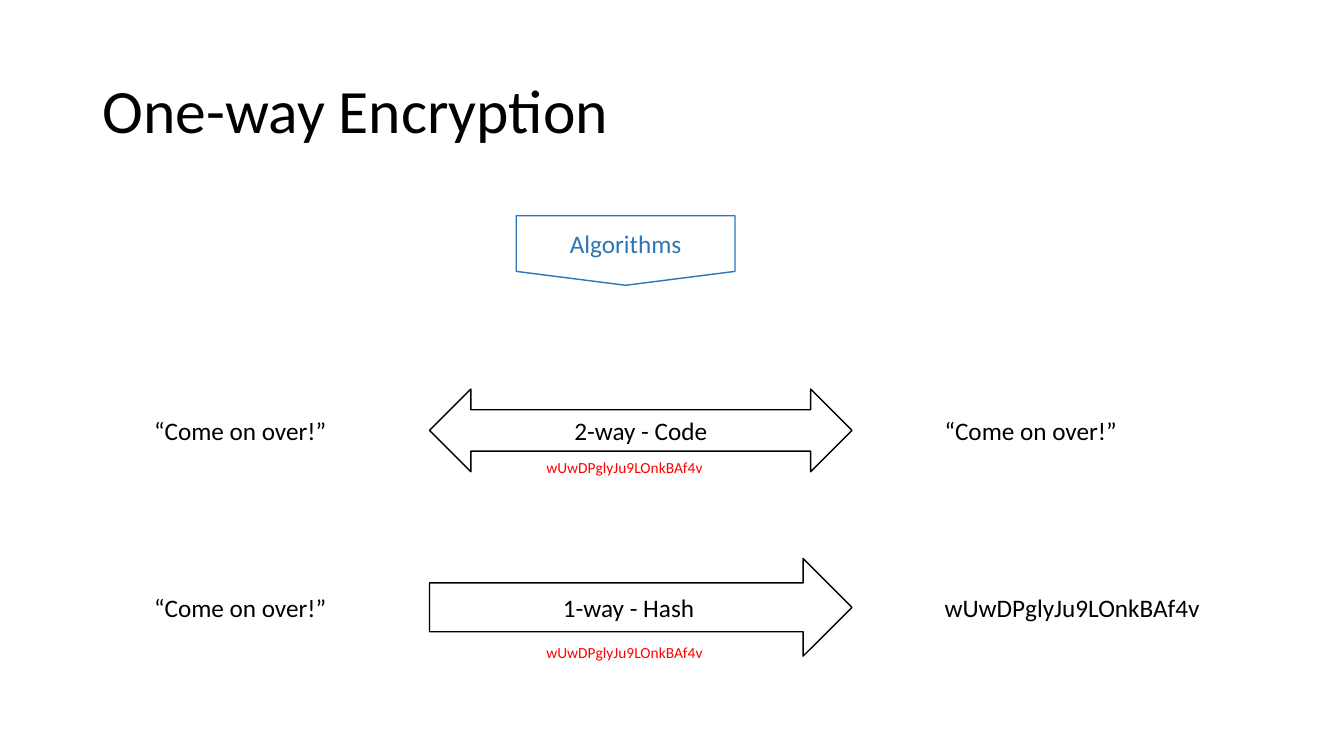
from pptx import Presentation
from pptx.dml.color import RGBColor
from pptx.enum.shapes import MSO_SHAPE as SHAPE
from pptx.enum.text import MSO_ANCHOR as ANCHOR, PP_ALIGN as ALIGN
from pptx.util import Inches, Pt

BLACK = RGBColor(0x00, 0x00, 0x00)
WHITE = RGBColor(0xFF, 0xFF, 0xFF)
BLUE = RGBColor(0x2E, 0x75, 0xB6)
RED = RGBColor(0xFF, 0x00, 0x00)

PLAIN = "“Come on over!”"
CIPHER = "wUwDPglyJu9LOnkBAf4v"
LABEL_H = 0.4
CIPHER_H = 0.29


def write(tf, text, size=18, color=BLACK, align=ALIGN.LEFT):
    p = tf.paragraphs[0]
    p.alignment = align
    r = p.add_run()
    r.text = text
    for name, value in {"name": "Calibri", "size": Pt(size)}.items():
        setattr(r.font, name, value)
    r.font.color.rgb = color
    return p


def add_text(s, box, text, size=18, color=BLACK, wrap=False):
    tf = s.shapes.add_textbox(*map(Inches, box)).text_frame
    tf.word_wrap = wrap
    return tf, write(tf, text, size, color)


def add_outlined(s, kind, box, text, color=BLACK, fill=None):
    sp = s.shapes.add_shape(kind, *map(Inches, box))
    sp.shadow.inherit = False
    if fill is None:
        sp.fill.background()
    else:
        sp.fill.solid()
        sp.fill.fore_color.rgb = fill
    sp.line.color.rgb = color
    sp.line.width = Pt(1)
    sp.text_frame.vertical_anchor = ANCHOR.MIDDLE
    write(sp.text_frame, text, color=color, align=ALIGN.CENTER)


def add_title(s, box, text):
    tf, p = add_text(s, box, text, size=44, wrap=True)
    tf.vertical_anchor = ANCHOR.MIDDLE
    p.line_spacing = 0.9


def add_row(s, box, kind, label, result, result_w, fill=None):
    """Input text, labelled arrow, ciphertext under it and output text."""
    x, y, w, h = box
    add_outlined(s, kind, box, label, fill=fill)
    # Input and output, centred on the arrow's height
    label_y = y + (h - LABEL_H) / 2
    add_text(s, (x - 2.83, label_y, 1.93, LABEL_H), PLAIN)
    add_text(s, (x + w + 0.82, label_y, result_w, LABEL_H), result)
    # Ciphertext below the arrow shaft
    add_text(s, (x + 1.06, y + h - 0.18, 1.77, CIPHER_H), CIPHER, 11, RED)


def main():
    prs = Presentation()
    prs.slide_width, prs.slide_height = Inches(13.33), Inches(7.5)
    s = prs.slides.add_slide(prs.slide_layouts[6])

    add_title(s, (0.92, 0.4, 11.5, 1.45), "One-way Encryption")
    add_outlined(s, SHAPE.FLOWCHART_OFFPAGE_CONNECTOR,
                 (5.12, 2.14, 2.17, 0.69), "Algorithms", BLUE)
    add_row(s, (4.26, 3.86, 4.19, 0.82), SHAPE.LEFT_RIGHT_ARROW,
            "2-way - Code", PLAIN, 1.93, WHITE)
    add_row(s, (4.26, 5.54, 4.19, 0.97), SHAPE.RIGHT_ARROW,
            "1-way - Hash", CIPHER, 2.76)

    prs.save("out.pptx")


if __name__ == "__main__":
    main()
